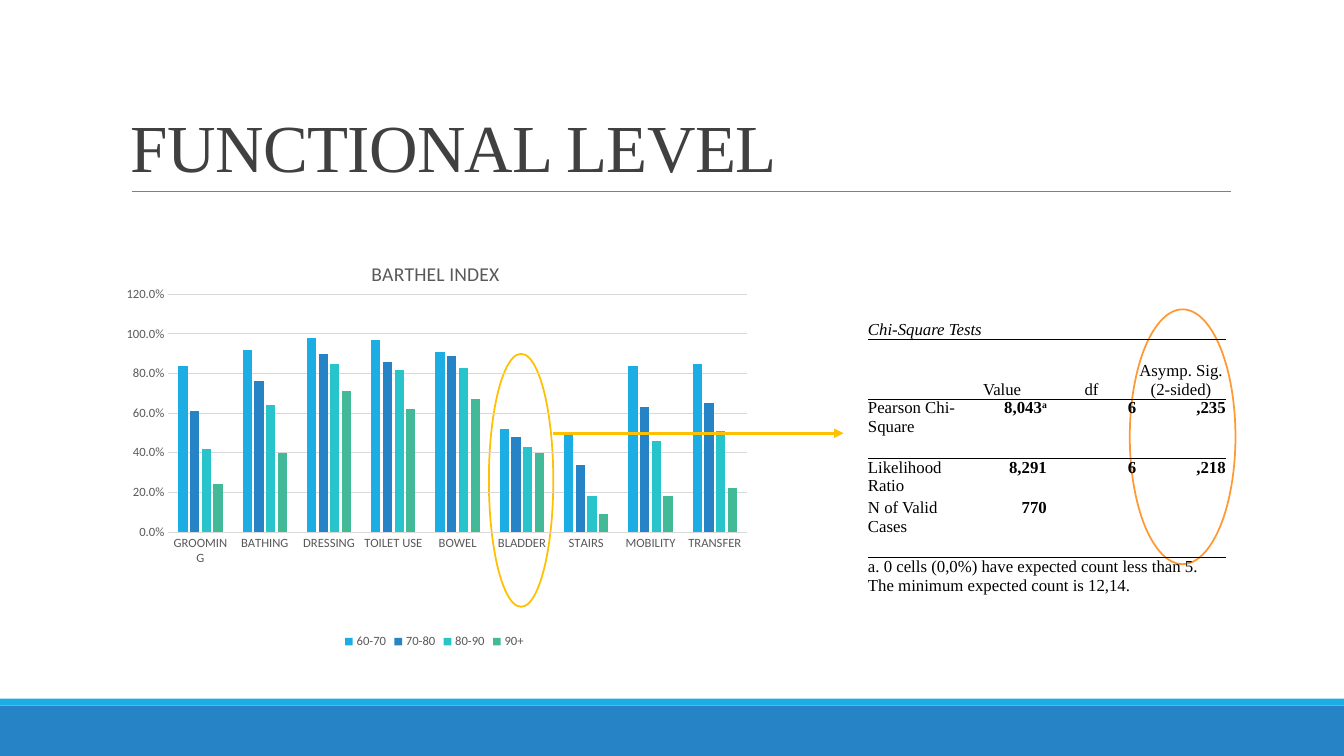
from lxml.etree import SubElement
from pptx import Presentation
from pptx.chart.data import CategoryChartData
from pptx.dml.color import RGBColor
from pptx.enum.chart import XL_CHART_TYPE, XL_LEGEND_POSITION, XL_TICK_MARK
from pptx.enum.shapes import MSO_CONNECTOR, MSO_SHAPE
from pptx.enum.text import MSO_ANCHOR, PP_ALIGN
from pptx.oxml import parse_xml
from pptx.oxml.ns import nsdecls, qn
from pptx.util import Pt

WHITE = RGBColor(0xFF, 0xFF, 0xFF)
BLACK = RGBColor(0x00, 0x00, 0x00)
TITLE_GREY = RGBColor(0x40, 0x40, 0x40)
LABEL_GREY = RGBColor(0x59, 0x59, 0x59)
RULE_GREY = RGBColor(0x80, 0x80, 0x80)
GRID_GREY = RGBColor(0xD9, 0xD9, 0xD9)
SKY = RGBColor(0x1C, 0xAD, 0xE4)
BLUE = RGBColor(0x26, 0x83, 0xC6)
TEAL = RGBColor(0x28, 0xC4, 0xCC)
GREEN = RGBColor(0x42, 0xBA, 0x97)
ORANGE = RGBColor(0xFF, 0x99, 0x33)
GOLD = RGBColor(0xFF, 0xC0, 0x00)

SERIF, SANS = "Times New Roman", "Calibri"
NO_GRID_STYLE = "{2D5ABB26-0587-4C30-8999-92F81FD0307C}"

ACTIVITIES = ["GROOMING", "BATHING", "DRESSING", "TOILET USE", "BOWEL",
              "BLADDER", "STAIRS", "MOBILITY", "TRANSFER"]
AGE_GROUPS = [
    ("60-70", SKY, [0.84, 0.92, 0.98, 0.97, 0.91, 0.52, 0.49, 0.84, 0.85]),
    ("70-80", BLUE, [0.61, 0.76, 0.90, 0.86, 0.89, 0.48, 0.34, 0.63, 0.65]),
    ("80-90", TEAL, [0.42, 0.64, 0.85, 0.82, 0.83, 0.43, 0.18, 0.46, 0.51]),
    ("90+", GREEN, [0.24, 0.40, 0.71, 0.62, 0.67, 0.40, 0.09, 0.18, 0.22]),
]
CHI_SQUARE = [
    ["Chi-Square Tests"],
    ["", "Value", "df", "Asymp. Sig. (2-sided)"],
    ["Pearson Chi-Square", "8,043", "6", ",235"],
    ["Likelihood Ratio", "8,291", "6", ",218"],
    ["N of Valid Cases", "770", "", ""],
    ["a. 0 cells (0,0%) have expected count less than 5. "
     "The minimum expected count is 12,14."],
]
CAPTION_ROW, HEADER_ROW, FOOTNOTE_ROW = 0, 1, 5
RULED_ROWS = (1, 2, 5)


def set_font(font, name, size, color):
    font.name, font.size = name, Pt(size)
    font.color.rgb = color


def set_layout(parent, **values):
    """Place a chart part by fractions of the chart area."""
    layout = parent.find(qn("c:layout"))
    if layout is None:
        layout = parse_xml(f"<c:layout {nsdecls('c')}/>")
        parent.insert(0, layout)
    manual = SubElement(layout, qn("c:manualLayout"))
    for tag, value in values.items():
        SubElement(manual, qn(f"c:{tag}")).set("val", str(value))


class SlideBuilder:
    def __init__(self, slide):
        self.slide = slide
        self.shapes = slide.shapes

    def shape(self, kind, left, top, width, height, fill, outline=None):
        shape = self.shapes.add_shape(kind, Pt(left), Pt(top), Pt(width), Pt(height))
        shape.shadow.inherit = False
        shape.fill.solid()
        shape.fill.fore_color.rgb = fill
        if outline is None:
            shape.line.fill.background()
        else:
            shape.line.color.rgb = outline
            shape.line.width = Pt(1.25)

    def line(self, left, right, y, color, weight, arrow=False):
        line = self.shapes.add_connector(
            MSO_CONNECTOR.STRAIGHT, Pt(left), Pt(y), Pt(right), Pt(y))
        line.line.color.rgb = color
        line.line.width = Pt(weight)
        if arrow:
            SubElement(line.line._get_or_add_ln(), qn("a:tailEnd")).set("type", "triangle")
        SubElement(line._element.spPr, qn("a:effectLst"))

    def title(self, text, left, top, width, height):
        frame = self.shapes.add_textbox(Pt(left), Pt(top), Pt(width), Pt(height)).text_frame
        frame.word_wrap = True
        frame.vertical_anchor = MSO_ANCHOR.BOTTOM
        frame.text = text
        paragraph = frame.paragraphs[0]
        paragraph.line_spacing = 0.85
        run = paragraph.runs[0]
        set_font(run.font, SERIF, 48, TITLE_GREY)
        run._r.get_or_add_rPr().set("spc", "-50")

    def column_chart(self, heading, left, top, width, height):
        data = CategoryChartData(number_format="###0.0%")
        data.categories = ACTIVITIES
        for name, _, shares in AGE_GROUPS:
            data.add_series(name, shares)
        chart = self.shapes.add_chart(XL_CHART_TYPE.COLUMN_CLUSTERED, Pt(left), Pt(top),
                                      Pt(width), Pt(height), data).chart
        set_font(chart.font, SANS, 10, BLACK)

        # Heading and legend
        chart.has_title = True
        chart.chart_title.text_frame.text = heading
        set_font(chart.chart_title.text_frame.paragraphs[0].runs[0].font, SANS, 14, LABEL_GREY)
        chart.chart_title.text_frame.paragraphs[0].runs[0].font.bold = False
        set_layout(chart.chart_title._element, xMode="edge", yMode="edge", x=0.4, y=0.05)
        chart.has_legend = True
        chart.legend.position = XL_LEGEND_POSITION.BOTTOM
        chart.legend.include_in_layout = False
        set_font(chart.legend.font, SANS, 9, LABEL_GREY)

        # Columns
        plot = chart.plots[0]
        plot.vary_by_categories = False
        plot.gap_width, plot.overlap = 219, -27
        for series, (_, color, _) in zip(plot.series, AGE_GROUPS):
            series.format.fill.solid()
            series.format.fill.fore_color.rgb = color
        set_layout(chart._chartSpace.chart.plotArea, layoutTarget="inner", xMode="edge",
                   yMode="edge", x=0.1, y=0.14, w=0.87, h=0.57)

        # Axes
        for axis in (chart.category_axis, chart.value_axis):
            axis.major_tick_mark = axis.minor_tick_mark = XL_TICK_MARK.NONE
            set_font(axis.tick_labels.font, SANS, 9, LABEL_GREY)
        shares_axis = chart.value_axis
        shares_axis.minimum_scale, shares_axis.maximum_scale = 0, 1.2
        shares_axis.major_unit = 0.2
        shares_axis.tick_labels.number_format = "###0.0%"
        shares_axis.tick_labels.number_format_is_linked = False
        shares_axis.format.line.fill.background()
        for rule in (chart.category_axis.format.line, shares_axis.major_gridlines.format.line):
            rule.color.rgb = GRID_GREY
            rule.width = Pt(0.75)

    def test_table(self, left, top, column_width, row_heights):
        table = self.shapes.add_table(
            len(row_heights), 4, Pt(left), Pt(top),
            Pt(4 * column_width), Pt(sum(row_heights))).table
        table.first_row = table.horz_banding = False
        table._tbl.tblPr.find(qn("a:tableStyleId")).text = NO_GRID_STYLE
        for column in table.columns:
            column.width = Pt(column_width)
        for r, height in enumerate(row_heights):
            table.rows[r].height = Pt(height)
            for c in range(4):
                text = CHI_SQUARE[r][c] if c < len(CHI_SQUARE[r]) else ""
                self.test_cell(table.cell(r, c), r, c, text)
        for r in (CAPTION_ROW, FOOTNOTE_ROW):
            table.cell(r, 0).merge(table.cell(r, 3))
        mark = table.cell(2, 1).text_frame.paragraphs[0].add_run()
        mark.text = "a"
        set_font(mark.font, SERIF, 12, BLACK)
        mark.font.bold = True
        mark._r.get_or_add_rPr().set("baseline", "30000")

    def test_cell(self, cell, r, c, text):
        cell.margin_left = cell.margin_right = cell.margin_top = cell.margin_bottom = 0
        cell.fill.background()
        if r in RULED_ROWS:
            cell._tc.get_or_add_tcPr().insert(0, parse_xml(
                f'<a:lnT {nsdecls("a")} w="{Pt(0.5)}"><a:solidFill>'
                f'<a:srgbClr val="{BLACK}"/></a:solidFill></a:lnT>'))
        cell.vertical_anchor = {CAPTION_ROW: MSO_ANCHOR.MIDDLE,
                                HEADER_ROW: MSO_ANCHOR.BOTTOM}.get(r, MSO_ANCHOR.TOP)
        if not text:
            return
        cell.text_frame.text = text
        paragraph = cell.text_frame.paragraphs[0]
        if c > 0:
            paragraph.alignment = PP_ALIGN.CENTER if r == HEADER_ROW else PP_ALIGN.RIGHT
        font = paragraph.runs[0].font
        set_font(font, SERIF, 12, BLACK)
        font.italic = r == CAPTION_ROW
        font.bold = c > 0 and r > HEADER_ROW


def main():
    deck = Presentation()
    deck.slide_width, deck.slide_height = Pt(960), Pt(540)
    page = SlideBuilder(deck.slides.add_slide(deck.slide_layouts[6]))

    # Footer bands and title rule
    page.shape(MSO_SHAPE.RECTANGLE, 0, 504, 960, 36, BLUE)
    page.shape(MSO_SHAPE.RECTANGLE, 0, 499, 960, 5, SKY)
    page.line(94.5, 879, 136.8, RULE_GREY, 0.5)

    # Rings behind the significance column and the bladder columns
    page.shape(MSO_SHAPE.OVAL, 807, 221, 75.5, 182, WHITE, ORANGE)
    page.shape(MSO_SHAPE.OVAL, 349.2, 252.7, 46, 180.7, WHITE, GOLD)

    # Title, chart, test results and the arrow between them
    page.title("FUNCTIONAL LEVEL", 86.4, 22.3, 792, 114.5)
    page.column_chart("BARTHEL INDEX", 72.7, 168.5, 475.2, 298)
    page.test_table(620, 228.2, 63.9, [14.4, 42.3, 42.3, 28.2, 42.3, 39])
    page.line(395.2, 602.6, 309.5, GOLD, 2.25, arrow=True)

    deck.save("out.pptx")


if __name__ == "__main__":
    main()
